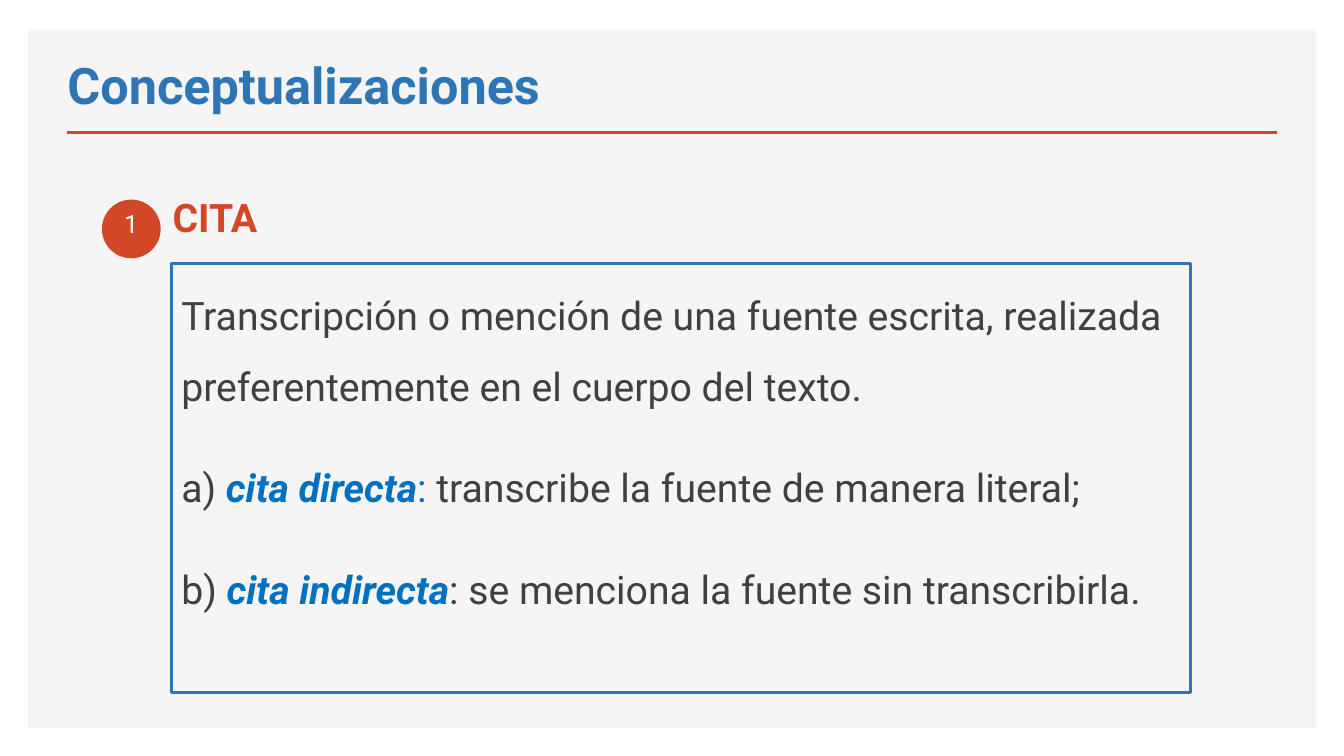
from dataclasses import dataclass

from lxml.etree import SubElement
from pptx import Presentation
from pptx.dml.color import RGBColor
from pptx.enum.shapes import MSO_CONNECTOR as Connector, MSO_SHAPE as Preset
from pptx.enum.text import MSO_ANCHOR as Anchor, PP_ALIGN as Align
from pptx.oxml.ns import qn
from pptx.util import Cm, Pt


@dataclass(frozen=True)
class Theme:
    """Colours, typeface and type sizes of the slide."""
    font: str = "Roboto"
    panel: str = "F5F5F5"
    blue: str = "2E75B6"
    orange: str = "D24726"
    term: str = "0070C0"
    ink: str = "404040"
    white: str = "FFFFFF"
    title_size: int = 36
    body_size: int = 28
    badge_size: int = 18


class SlideBuilder:
    """Draws styled elements on one slide."""

    def __init__(self, slide, theme):
        self.slide = slide
        self.theme = theme

    def style(self, font, color, size=None, bold=None, italic=None):
        """Apply the theme typeface and the given look to a font."""
        font.name = self.theme.font
        font.color.rgb = RGBColor.from_string(color)
        font.bold, font.italic = bold, italic
        if size:
            font.size = Pt(size)

    def shape(self, preset, box, fill=None, line=None, width=2.25):
        """Add a preset shape without shadow."""
        shape = self.slide.shapes.add_shape(preset, *map(Cm, box))
        shape.shadow.inherit = False
        if fill:
            shape.fill.solid()
            shape.fill.fore_color.rgb = RGBColor.from_string(fill)
        else:
            shape.fill.background()
        if line:
            shape.line.color.rgb = RGBColor.from_string(line)
            shape.line.width = Pt(width)
        else:
            shape.line.fill.background()
        return shape

    def rule(self, left, right, top, color, width):
        """Add a horizontal line."""
        line = self.slide.shapes.add_connector(
            Connector.STRAIGHT, Cm(left), Cm(top), Cm(right), Cm(top))
        line.line.color.rgb = RGBColor.from_string(color)
        line.line.width = Pt(width)
        SubElement(line._element.spPr, qn("a:effectLst"))

    def text(self, box, words, color, size, anchor=Anchor.TOP, spacing=None):
        """Add a bold one-line heading."""
        frame = self.slide.shapes.add_textbox(*map(Cm, box)).text_frame
        frame.word_wrap = True
        frame.vertical_anchor = anchor
        paragraph = frame.paragraphs[0]
        paragraph.text = words
        paragraph.line_spacing = spacing
        self.style(paragraph.font, color, size, bold=True)

    def badge(self, box, label):
        """Add a numbered disc."""
        frame = self.shape(Preset.OVAL, box, fill=self.theme.orange).text_frame
        frame.margin_left = frame.margin_right = 0
        frame.margin_top = frame.margin_bottom = 0
        frame.vertical_anchor = Anchor.TOP
        paragraph = frame.paragraphs[0]
        paragraph.text = label
        paragraph.alignment = Align.CENTER
        self.style(paragraph.font, self.theme.white, self.theme.badge_size)

    def definition(self, box, paragraphs):
        """Add a framed text whose paragraphs are lists of (words, color, emphasis)."""
        frame = self.shape(Preset.RECTANGLE, box, line=self.theme.blue).text_frame
        frame.word_wrap = True
        frame.vertical_anchor = Anchor.TOP
        for index, runs in enumerate(paragraphs):
            paragraph = frame.add_paragraph() if index else frame.paragraphs[0]
            paragraph.alignment = Align.LEFT
            paragraph.line_spacing = 1.5
            paragraph.space_before, paragraph.space_after = Pt(10), Pt(12)
            paragraph.font.size = Pt(self.theme.body_size)
            for words, color, emphasis in runs:
                run = paragraph.add_run()
                run.text = words
                self.style(run.font, color, bold=emphasis, italic=emphasis)


def main():
    """Build and save the slide."""
    presentation = Presentation()
    presentation.slide_width, presentation.slide_height = Cm(33.87), Cm(19.05)
    theme = Theme()
    slide = presentation.slides.add_slide(presentation.slide_layouts[6])
    builder = SlideBuilder(slide, theme)

    builder.shape(Preset.RECTANGLE, (0.71, 0.74, 32.46, 17.6), fill=theme.panel)
    builder.rule(1.68, 32.18, 3.33, theme.orange, 2)
    builder.text((1.45, 1.24, 21.77, 1.78), "Conceptualizaciones",
                 theme.blue, theme.title_size, Anchor.BOTTOM)
    builder.definition((4.32, 6.63, 25.68, 10.82), [
        [("Transcripción o mención de una fuente escrita, realizada "
          "preferentemente en el cuerpo del texto.", theme.ink, False)],
        [("a) ", theme.ink, False), ("cita directa", theme.term, True),
         (": ", theme.term, False),
         ("transcribe la fuente de manera literal;", theme.ink, False)],
        [("b) ", theme.ink, False), ("cita indirecta", theme.term, True),
         (": se menciona la fuente sin transcribirla.", theme.ink, False)],
    ])
    builder.badge((2.57, 5.03, 1.48, 1.48), "1")
    builder.text((4.1, 5.31, 7.25, 1.2), "CITA",
                 theme.orange, theme.body_size, spacing=Pt(18))
    presentation.save("out.pptx")


if __name__ == "__main__":
    main()
